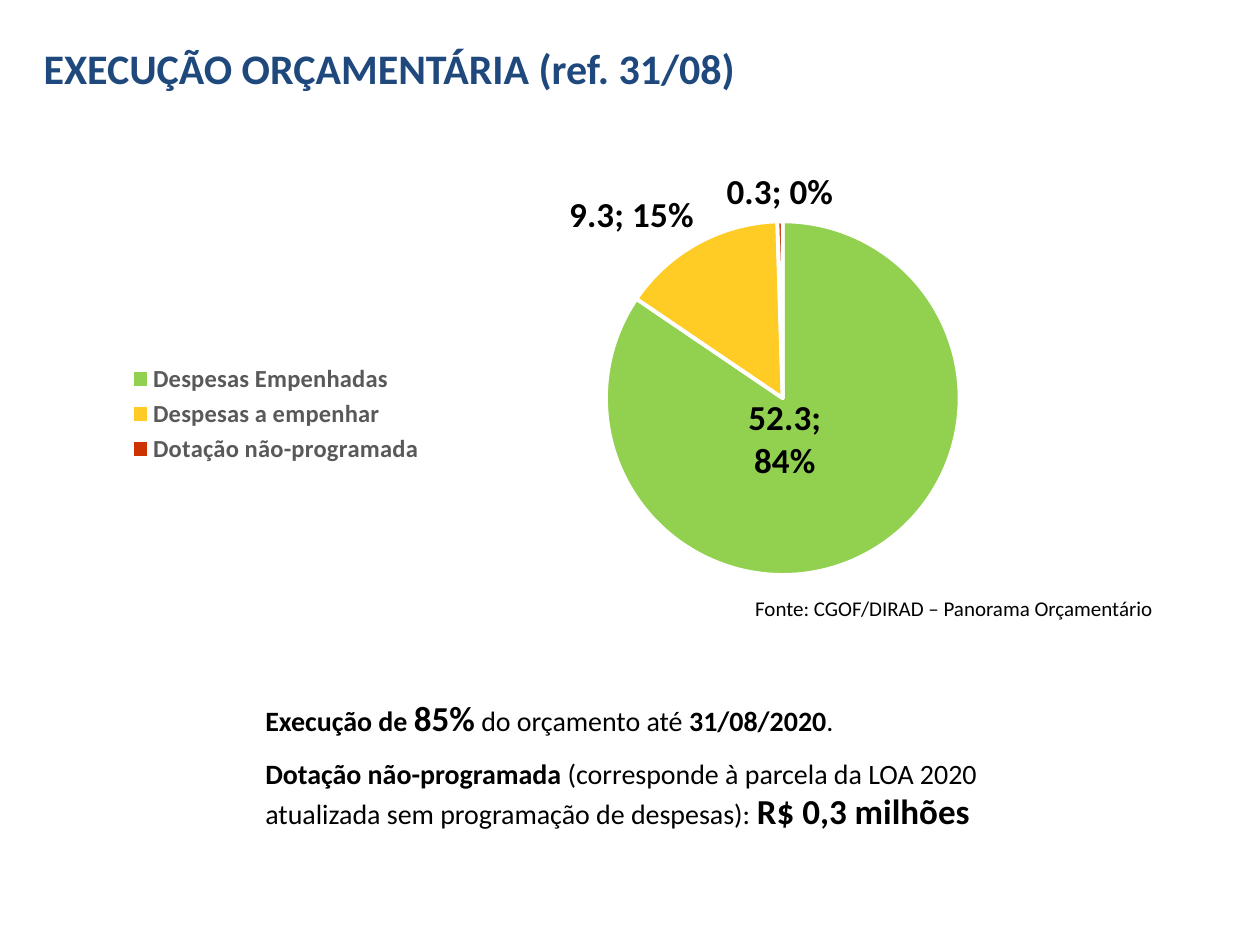
from lxml.etree import SubElement as Sub
from pptx import Presentation
from pptx.chart.data import CategoryChartData as Data
from pptx.dml.color import RGBColor
from pptx.enum.chart import XL_CHART_TYPE as Kind, XL_LABEL_POSITION as Spot, XL_LEGEND_POSITION as Side
from pptx.enum.text import MSO_AUTO_SIZE as Fit, PP_ALIGN as Align
from pptx.oxml import parse_xml
from pptx.oxml.ns import qn
from pptx.util import Cm, Pt

NAVY = RGBColor(0x1F, 0x49, 0x7D)
BLACK = RGBColor(0, 0, 0)
GREY = RGBColor(0x59, 0x59, 0x59)
WHITE = RGBColor(255, 255, 255)
GREEN = RGBColor(0x92, 0xD0, 0x50)
YELLOW = RGBColor(0xFF, 0xCB, 0x25)
RED = RGBColor(0xCC, 0x33, 0x00)
FACE = "Calibri"
NS = "http://schemas.openxmlformats.org/drawingml/2006/chart"

PARTS = [
    ("Despesas Empenhadas", 52.3, GREEN),
    ("Despesas a empenhar", 9.3, YELLOW),
    ("Dotação não-programada", 0.3, RED),
]


def style(font, size, bold=False, color=BLACK):
    for key, val in {"name": FACE, "size": Pt(size), "bold": bold}.items():
        setattr(font, key, val)
    font.color.rgb = color


def text(slide, box, runs, color=BLACK, align=Align.LEFT, wrap=True):
    """Place one paragraph made of (words, size, bold) runs."""
    frame = slide.shapes.add_textbox(*map(Cm, box)).text_frame
    frame.word_wrap = wrap
    frame.auto_size = Fit.SHAPE_TO_FIT_TEXT
    para = frame.paragraphs[0]
    para.alignment = align
    for words, size, bold in runs:
        run = para.add_run()
        run.text = words
        style(run.font, size, bold, color)


def layout(**vals):
    """Manual chart layout from its named values."""
    tags = "".join(f'<c:{key} val="{val}"/>' for key, val in vals.items())
    return parse_xml(f'<c:layout xmlns:c="{NS}"><c:manualLayout>{tags}'
                     "</c:manualLayout></c:layout>")


def percent(node):
    """Show value and percentage, parted by a semicolon."""
    node.find(qn("c:showPercent")).set("val", "1")
    mark = Sub(node, qn("c:separator"))
    mark.text = "; "
    node.find(qn("c:showBubbleSize")).addnext(mark)


def pie(slide, box):
    data = Data()
    data.categories = [name for name, _, _ in PARTS]
    data.add_series("Series 1", [val for _, val, _ in PARTS])
    chart = slide.shapes.add_chart(Kind.PIE, *map(Cm, box), data).chart
    chart.has_title = False
    style(chart.font, 10)

    # Legend
    chart.has_legend = True
    chart.legend.position = Side.LEFT
    chart.legend.include_in_layout = False
    style(chart.legend.font, 14, True, GREY)

    # Slices
    plot = chart.plots[0]
    plot.vary_by_categories = True
    ser = plot.series[0]
    for i, (_, _, color) in enumerate(PARTS):
        look = ser.points[i].format
        look.fill.solid()
        look.fill.fore_color.rgb = color
        look.line.color.rgb = WHITE
        look.line.width = Pt(2.25)

    # Labels: the largest one sits inside, under the centre
    tags = ser.data_labels
    tags.show_value = True
    tags.position = Spot.OUTSIDE_END
    style(tags.font, 20, True)
    main = ser.points[0].data_label
    main.position = Spot.CENTER
    style(main.font, 20, True)
    root = chart.element
    one = root.find(".//" + qn("c:dLbl"))
    one.find(qn("c:idx")).addnext(layout(x=-0.04, y=-0.07))
    percent(one)
    percent(root.find(".//" + qn("c:ser") + "/" + qn("c:dLbls")))

    # Plot area
    area = root.find(".//" + qn("c:plotArea"))
    old = area.find(qn("c:layout"))
    if old is not None:
        area.remove(old)
    area.insert(0, layout(layoutTarget="inner", xMode="edge", yMode="edge",
                          x=0.5, y=0.13, w=0.36, h=0.68))


def notes(slide, box):
    """Two remarks, one above the other."""
    left, top, width, high = box
    text(slide, (left, top, 12.12, 1.12), [
        ("Execução de ", 16, True), ("85%", 20, True),
        (" do orçamento até ", 16, False), ("31/08/2020", 16, True),
        (".", 16, False)], wrap=False)
    text(slide, (left, top + 1.2, width, high - 1.2), [
        ("Dotação não-programada ", 16, True),
        ("(corresponde à parcela da LOA 2020 atualizada sem "
         "programação de despesas): ", 16, False),
        ("R$ 0,3 milhões", 20, True)])


def main():
    prs = Presentation()
    prs.slide_width, prs.slide_height = Cm(25.4), Cm(19.05)
    slide = prs.slides.add_slide(prs.slide_layouts[6])
    text(slide, (0.63, 0.74, 24.1, 1.24),
         [("EXECUÇÃO ORÇAMENTÁRIA (ref. 31/08)", 24, True)], NAVY)
    notes(slide, (5.1, 13.92, 15.01, 3))
    text(slide, (8.3, 11.89, 15.19, 0.76),
         [("Fonte: CGOF/DIRAD – Panorama Orçamentário", 12, False)],
         align=Align.RIGHT)
    pie(slide, (2.31, 3.05, 19.81, 10.59))
    prs.save("out.pptx")


if __name__ == "__main__":
    main()
